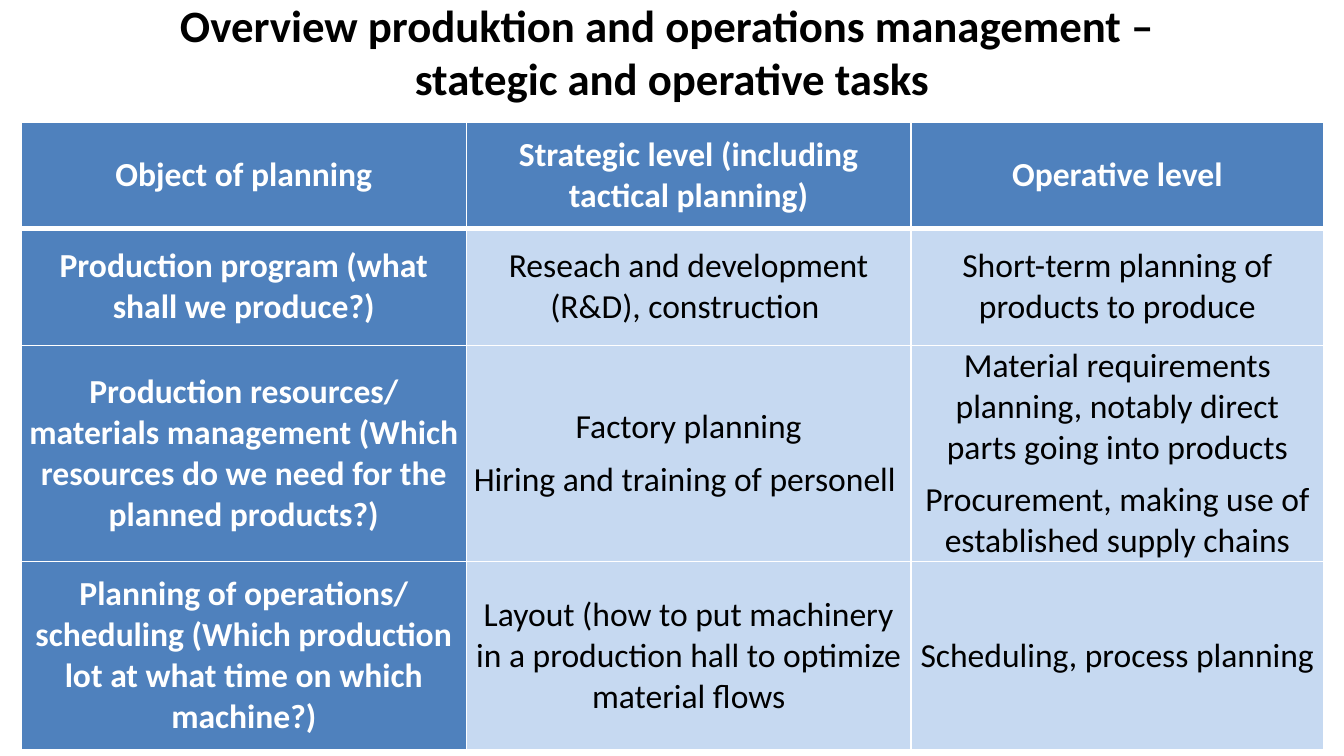
from dataclasses import dataclass

from lxml import etree
from pptx import Presentation
from pptx.dml.color import RGBColor
from pptx.enum.text import MSO_ANCHOR, PP_ALIGN
from pptx.oxml.ns import qn
from pptx.util import Inches, Pt

CENTER = PP_ALIGN.CENTER
MIDDLE = MSO_ANCHOR.MIDDLE
TITLE_ONLY = 5


@dataclass(frozen=True)
class Theme:
    """Colours, font and type sizes of the slide."""
    font: str = "Calibri"
    title_size: int = 24
    cell_size: int = 18
    dark: str = "000000"
    light: str = "FFFFFF"
    heading_fill: str = "4F81BD"
    body_fill: str = "C6D9F1"
    rule: int = 1
    header_rule: int = 3


THEME = Theme()
TITLE = "Overview produktion and operations management – \vstategic and operative tasks"
COLUMN_WIDTHS = [3.31, 3.31, 3.07]
ROW_HEIGHTS = [0.79, 0.87, 1.6, 1.4]
ROWS = [
    ["Object of planning",
     "Strategic level (including tactical planning)",
     "Operative level"],
    ["Production program (what shall we produce?)",
     "Reseach and development (R&D), construction ",
     "Short-term planning of products to produce"],
    ["Production resources/ materials management "
     "(Which resources do we need for the planned products?)",
     "Factory planning\nHiring and training of personell ",
     "Material requirements planning, notably direct parts going into products\n"
     "Procurement, making use of established supply chains"],
    ["Planning of operations/ scheduling "
     "(Which production lot at what time on which machine?)",
     "Layout (how to put machinery in a production hall to optimize material flows",
     "Scheduling, process planning"],
]


def set_attrs(obj, values):
    """Set each attribute of obj from a dict of format values."""
    for name, value in values.items():
        setattr(obj, name, value)


def format_text(tf, size, color, bold, space_after=0):
    """Centre the paragraphs of a text frame and style their runs."""
    for p in tf.paragraphs:
        set_attrs(p, {"alignment": CENTER, "space_before": Pt(0),
                      "space_after": Pt(space_after)})
        for r in p.runs:
            set_attrs(r.font, {"name": THEME.font, "size": Pt(size), "bold": bold})
            r.font.color.rgb = RGBColor.from_string(color)


def add_title(s):
    """Place and format the slide title."""
    title = s.shapes.title
    set_attrs(title, {"left": Inches(0.5), "top": Inches(-0.09),
                      "width": Inches(9), "height": Inches(0.94)})
    tf = title.text_frame
    tf.text = TITLE
    set_attrs(tf, {"vertical_anchor": MIDDLE, "word_wrap": True})
    format_text(tf, THEME.title_size, THEME.dark, True)


def set_borders(cell, widths):
    """Draw the cell borders with the given widths in points."""
    tc_pr = cell._tc.get_or_add_tcPr()
    for side, width in widths.items():
        line = etree.SubElement(tc_pr, qn(f"a:ln{side}"), w=str(Pt(width)))
        fill = etree.SubElement(line, qn("a:solidFill"))
        etree.SubElement(fill, qn("a:srgbClr"), val=THEME.light)


def fill_cell(cell, text, row, column):
    """Write one cell, styled as a heading in the first row and column."""
    heading = row == 0 or column == 0
    cell.text = text
    set_attrs(cell, {"vertical_anchor": MIDDLE,
                     "margin_left": Inches(0.05), "margin_right": Inches(0.05),
                     "margin_top": 0, "margin_bottom": 0})
    format_text(cell.text_frame, THEME.cell_size,
                THEME.light if heading else THEME.dark, heading, 6)
    set_borders(cell, {"L": THEME.rule, "R": THEME.rule,
                       "T": THEME.header_rule if row == 1 else THEME.rule,
                       "B": THEME.header_rule if row == 0 else THEME.rule})
    cell.fill.solid()
    cell.fill.fore_color.rgb = RGBColor.from_string(
        THEME.heading_fill if heading else THEME.body_fill)


def add_task_table(s):
    """Add the table of strategic and operative tasks."""
    table = s.shapes.add_table(
        len(ROWS), len(COLUMN_WIDTHS), Inches(0.16), Inches(0.91),
        Inches(sum(COLUMN_WIDTHS)), Inches(sum(ROW_HEIGHTS))).table
    for column, width in zip(table.columns, COLUMN_WIDTHS):
        column.width = Inches(width)
    for row, height in zip(table.rows, ROW_HEIGHTS):
        row.height = Inches(height)
    for i, texts in enumerate(ROWS):
        for j, text in enumerate(texts):
            fill_cell(table.cell(i, j), text, i, j)


def main():
    """Build and save the widescreen slide."""
    prs = Presentation()
    set_attrs(prs, {"slide_width": Inches(10),
                    "slide_height": Inches(10) * 9 // 16})
    s = prs.slides.add_slide(prs.slide_layouts[TITLE_ONLY])
    add_title(s)
    add_task_table(s)
    prs.save("out.pptx")


if __name__ == "__main__":
    main()
